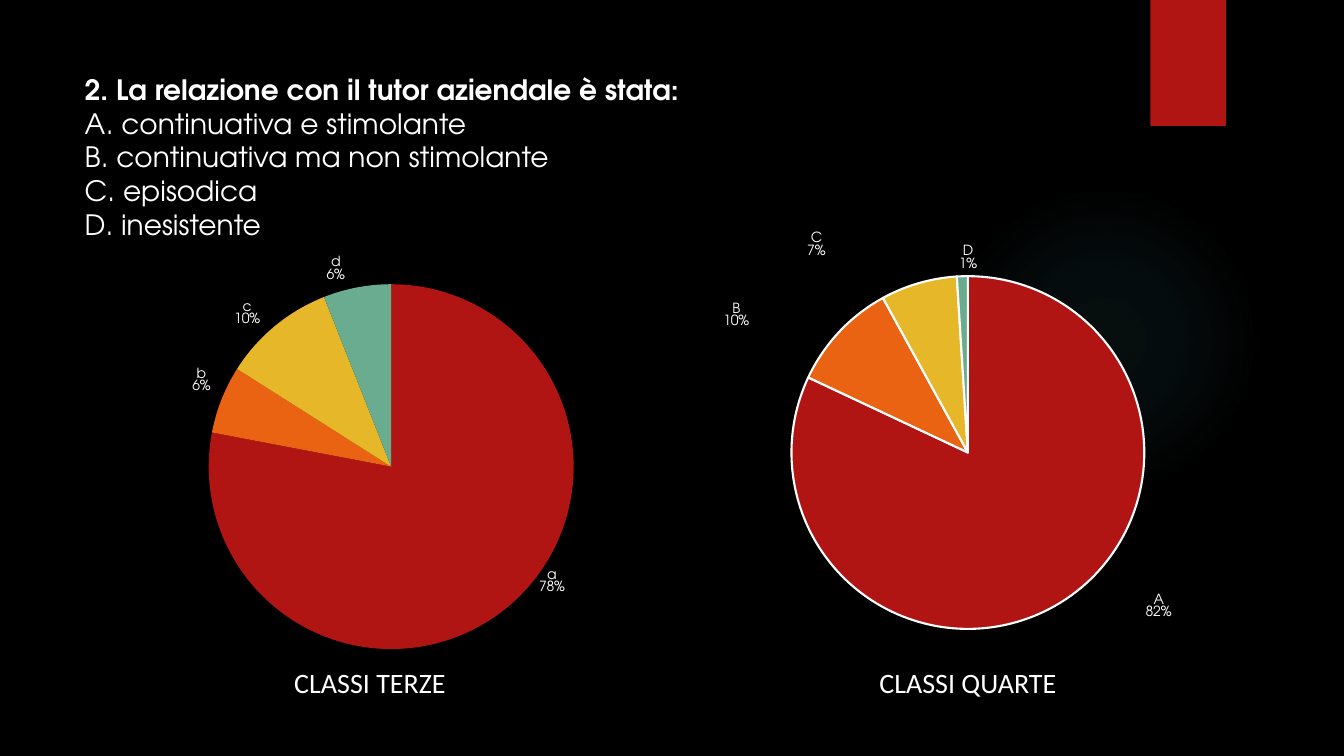
from lxml import etree
from pptx import Presentation
from pptx.chart.data import CategoryChartData
from pptx.dml.color import RGBColor
from pptx.enum.chart import XL_CHART_TYPE, XL_LABEL_POSITION
from pptx.enum.shapes import MSO_SHAPE
from pptx.enum.text import MSO_ANCHOR, PP_ALIGN
from pptx.oxml import parse_xml
from pptx.oxml.ns import nsdecls, qn
from pptx.util import Inches, Pt

QUESTION = "2. La relazione con il tutor aziendale è stata:"
ANSWERS = ["A. continuativa e stimolante", "B. continuativa ma non stimolante",
           "C. episodica", "D. inesistente"]
SLICE_COLORS = ["B01513", "EA6312", "E6B729", "6AAC90"]
HEADING_FONT, CAPTION_FONT, WHITE = "TeX Gyre Adventor", "Calibri", "FFFFFF"

# Frames in inches; pie = centre x, centre y, radius; shifts = label moves as shares of the chart
CLASSES = [
    dict(caption="CLASSI QUARTE", caption_x=9.6, categories="ABCD", values=[82, 10, 7, 1],
         frame=(6.74, 2.3, 5.68, 4.24), pie=(9.6, 4.49, 1.75), outline=WHITE,
         shifts=[(0.14, -0.03), (-0.15, 0), (-0.16, -0.05), (0.01, 0)]),
    dict(caption="CLASSI TERZE", caption_x=3.67, categories="abcd", values=[78, 6, 10, 6],
         frame=(1.04, 2.4, 5.51, 4.27), pie=(3.88, 4.63, 1.81), outline=None,
         shifts=[(0.05, -0.1), (-0.01, -0.01), (-0.02, 0.01), (-0.02, 0)]),
]


def color(value):
    return RGBColor.from_string(value)


def style(font, name, size):
    font.name, font.size = name, Pt(size)
    font.color.rgb = color(WHITE)


def inches(*lengths):
    return [Inches(length) for length in lengths]


def layout_xml(**settings):
    items = "".join(f'<c:{key} val="{value}"/>' for key, value in settings.items())
    return parse_xml(f'<c:layout {nsdecls("c")}><c:manualLayout>{items}'
                     '</c:manualLayout></c:layout>')


def add_decoration(kind, *frame):
    shape = page.shapes.add_shape(kind, *inches(*frame))
    shape.shadow.inherit = False
    shape.line.fill.background()
    return shape


def add_pie(group):
    left, top, width, height = group["frame"]
    center_x, center_y, radius = group["pie"]
    data = CategoryChartData()
    data.categories = list(group["categories"])
    data.add_series("Series 1", group["values"])
    chart = page.shapes.add_chart(XL_CHART_TYPE.PIE, *inches(*group["frame"]), data).chart
    chart.has_legend = chart.has_title = False
    style(chart.font, HEADING_FONT, 10)
    plot = chart.plots[0]
    plot.vary_by_categories = True

    # Slices and their labels
    for index, fill in enumerate(SLICE_COLORS):
        point = plot.series[0].points[index]
        point.format.fill.solid()
        point.format.fill.fore_color.rgb = color(fill)
        if group["outline"]:
            point.format.line.color.rgb = color(group["outline"])
            point.format.line.width = Pt(1.5)
        else:
            point.format.line.fill.background()
        style(point.data_label.font, HEADING_FONT, 10)
        point.data_label.position = XL_LABEL_POSITION.OUTSIDE_END

    # Category and percentage on two lines, moved from the slice edge
    root = chart._chartSpace
    shown = {"showVal": "0", "showCatName": "1", "showPercent": "1", "showLeaderLines": "0"}
    for tag, value in shown.items():
        for flag in root.iter(qn(f"c:{tag}")):
            flag.set("val", value)
    for flag in list(root.iter(qn("c:showBubbleSize"))):
        separator = etree.Element(qn("c:separator"))
        separator.text = "\n"
        flag.addnext(separator)
    for label, (x, y) in zip(root.iter(qn("c:dLbl")), group["shifts"]):
        label.find(qn("c:idx")).addnext(layout_xml(x=x, y=y))

    # Pie circle inside the chart frame
    area = root.find(".//" + qn("c:plotArea"))
    for old in area.findall(qn("c:layout")):
        area.remove(old)
    area.insert(0, layout_xml(
        layoutTarget="inner", xMode="edge", yMode="edge",
        x=(center_x - radius - left) / width, y=(center_y - radius - top) / height,
        w=2 * radius / width, h=2 * radius / height))


def add_caption(group):
    width = 3
    box = page.shapes.add_textbox(*inches(group["caption_x"] - width / 2, 6.53, width, 0.48))
    box.text_frame.word_wrap = True
    box.text_frame.vertical_anchor = MSO_ANCHOR.MIDDLE
    para = box.text_frame.paragraphs[0]
    para.text = group["caption"]
    para.alignment = PP_ALIGN.CENTER
    style(para.font, CAPTION_FONT, 20)


deck = Presentation()
deck.slide_width, deck.slide_height = inches(13.33, 7.5)
page = deck.slides.add_slide(deck.slide_layouts[5])
page.background.fill.solid()
page.background.fill.fore_color.rgb = color("000000")

# Soft glow and red tab
glow = add_decoration(MSO_SHAPE.OVAL, 9.41, 1.83, 3.08, 3.08)
stops = "".join(f'<a:gs pos="{place}000"><a:srgbClr val="50B9C1"><a:alpha val="{alpha}000"/>'
                '</a:srgbClr></a:gs>' for place, alpha in [(0, 7), (36, 6), (69, 0), (100, 0)])
glow._element.spPr.find(qn("a:prstGeom")).addnext(parse_xml(
    f'<a:gradFill {nsdecls("a")}><a:gsLst>{stops}</a:gsLst><a:path path="circle">'
    '<a:fillToRect l="50000" t="50000" r="50000" b="50000"/></a:path></a:gradFill>'))
tab = add_decoration(MSO_SHAPE.RECTANGLE, 11.41, 0, 0.75, 1.25)
tab.fill.solid()
tab.fill.fore_color.rgb = color("B01513")

# Question and answers
title = page.shapes.title
title.left, title.top, title.width, title.height = inches(0.74, 0.67, 9.4, 1.85)
title.text_frame.word_wrap = True
title.text_frame.vertical_anchor = MSO_ANCHOR.TOP
para = title.text_frame.paragraphs[0]
para.alignment = PP_ALIGN.LEFT
para.line_spacing = Pt(24)
for number, line in enumerate([QUESTION, *ANSWERS]):
    if number:
        para.add_line_break()
    span = para.add_run()
    span.text = line
    span.font.bold = number == 0
    style(span.font, HEADING_FONT, 20)

# Charts and captions
for group in CLASSES:
    add_pie(group)
    add_caption(group)

deck.save("out.pptx")
